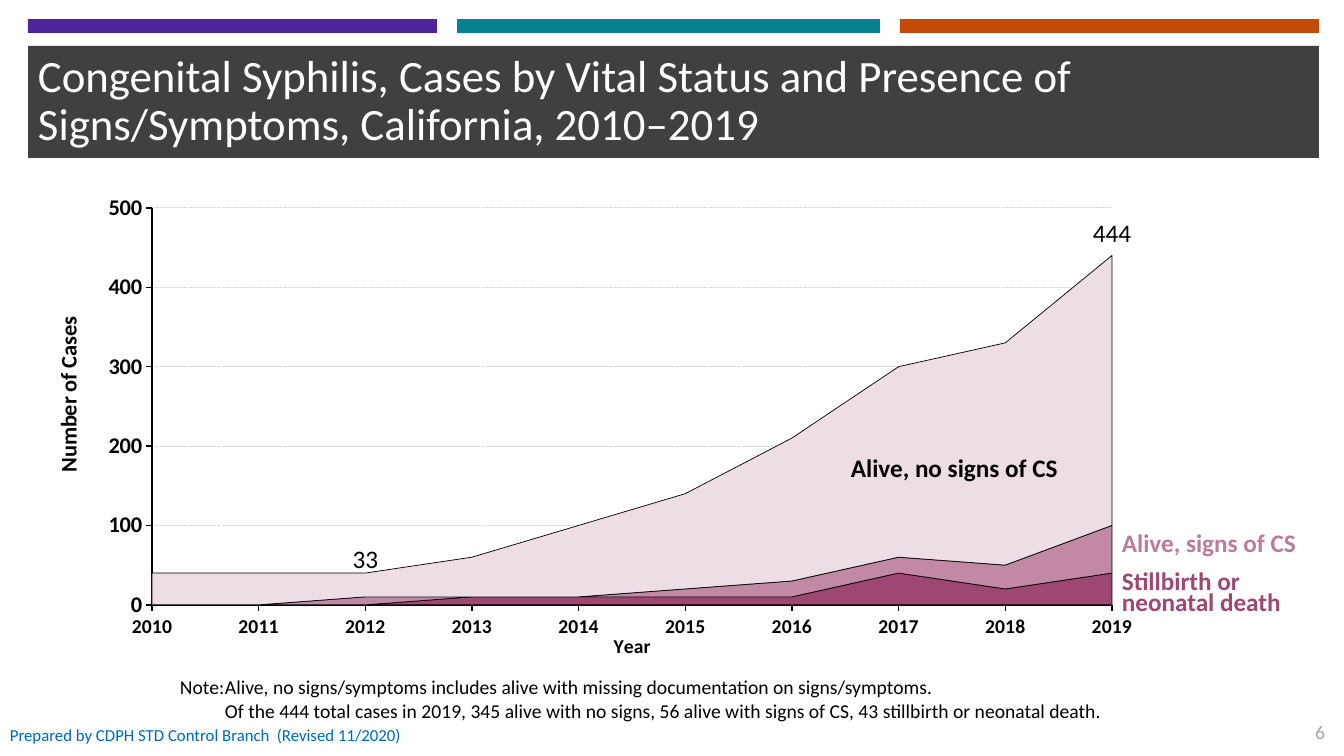
import pptx
import pptx.chart.data
import pptx.dml.color
import pptx.enum.chart
import pptx.enum.dml
import pptx.enum.shapes
import pptx.enum.text
import pptx.oxml
import pptx.oxml.ns
import pptx.util

Pt = pptx.util.Pt
qn = pptx.oxml.ns.qn
Align = pptx.enum.text.PP_ALIGN
Anchor = pptx.enum.text.MSO_ANCHOR
Kind = pptx.enum.chart.XL_CHART_TYPE
Mark = pptx.enum.chart.XL_TICK_MARK
SCALE = 914400 / 100.8
FONT = "Calibri"
HUES = {
    "dark": "404040", "violet": "4F259C", "teal": "068190", "orange": "C44A07",
    "white": "FFFFFF", "black": "000000", "gray": "A6A6A6", "grid": "D9D9D9",
    "blue": "0167BB", "plum": "9E4770", "mauve": "C189A4", "rose": "BA7C9A",
    "pale": "EDDDE5",
}
YEARS = [str(year) for year in range(2010, 2020)]
DEATHS = [0, 0, 0, 10, 10, 10, 10, 40, 20, 40]
SIGNS = [0, 0, 10, 0, 0, 10, 20, 20, 30, 60]
CLEAR = [40, 40, 30, 50, 90, 120, 180, 240, 280, 340]
TOTALS = [47, 46, 33, 58, 104, 148, 214, 288, 328, 444]
WIDE, HIGH = 1273, 510  # chart size


def px(n):
    return pptx.util.Emu(round(n * SCALE))


def rgb(hue):
    return pptx.dml.color.RGBColor.from_string(HUES[hue])


def style(font, size, hue="black", bold=False):
    font.name, font.size, font.bold = FONT, Pt(size), bold
    font.color.rgb = rgb(hue)


def stroke(line, hue, width):
    line.color.rgb = rgb(hue)
    line.width = Pt(width)


def layout(x, y, w=None, h=None):
    """Manual chart layout from px within the chart."""
    parts = ['<c:layoutTarget val="inner"/>'] if w else []
    parts += [f'<c:{side}Mode val="edge"/>' for side in "xy"]
    sizes = zip("xywh", (x, y, w, h), (WIDE, HIGH, WIDE, HIGH))
    parts += [f'<c:{side} val="{n / full}"/>'
              for side, n, full in sizes if n is not None]
    return pptx.oxml.parse_xml(
        f'<c:layout {pptx.oxml.ns.nsdecls("c")}><c:manualLayout>'
        f'{"".join(parts)}</c:manualLayout></c:layout>')


class Page:
    def __init__(self, deck):
        self.slide = deck.slides.add_slide(deck.slide_layouts[6])
        self.shapes = self.slide.shapes

    def bar(self, x, y, w, h, hue):
        box = self.shapes.add_shape(
            pptx.enum.shapes.MSO_SHAPE.RECTANGLE, px(x), px(y), px(w), px(h))
        box.shadow.inherit = False
        box.fill.solid()
        box.fill.fore_color.rgb = rgb(hue)
        box.line.fill.background()

    def text(self, words, x, y, w, h, size=18, hue="black", bold=False,
             align=Align.LEFT, anchor=Anchor.TOP, lead=None, wrap=True, hang=0):
        frame = self.shapes.add_textbox(px(x), px(y), px(w), px(h)).text_frame
        frame.word_wrap = wrap
        frame.vertical_anchor = anchor
        for i, line in enumerate(words.split("\n")):
            para = frame.add_paragraph() if i else frame.paragraphs[0]
            para.alignment = align
            if lead:
                para.line_spacing = lead
            run = para.add_run()
            run.text = line
            style(run.font, size, hue, bold)
            if hang:
                props = para._p.get_or_add_pPr()
                props.set("marL", str(px(hang)))
                props.set("indent", str(-px(hang)))
                props.append(pptx.oxml.parse_xml(
                    f'<a:tabLst {pptx.oxml.ns.nsdecls("a")}>'
                    f'<a:tab pos="{px(hang)}" algn="l"/></a:tabLst>'))

    def axis(self, axis, title, size, x, y, turn):
        axis.major_tick_mark = Mark.OUTSIDE
        axis.minor_tick_mark = Mark.NONE
        style(axis.tick_labels.font, size, bold=True)
        stroke(axis.format.line, "black", 1)
        frame = axis.axis_title.text_frame
        frame.text = title
        style(frame.paragraphs[0].runs[0].font, size, bold=True)
        node = axis.axis_title._element
        node.find(".//" + qn("a:bodyPr")).set("rot", str(turn * 60000))
        for old in node.findall(qn("c:layout")):
            node.remove(old)
        node.find(qn("c:tx")).addnext(layout(x, y))

    def chart(self, x, y):
        data = pptx.chart.data.CategoryChartData(number_format="0")
        data.categories = YEARS
        for name, vals in (("Stillbirth or neonatal death", DEATHS),
                           ("Alive, signs of CS", SIGNS),
                           ("Alive, no signs of CS", CLEAR), ("Total", TOTALS)):
            data.add_series(name, vals)
        chart = self.shapes.add_chart(
            Kind.AREA_STACKED, px(x), px(y), px(WIDE), px(HIGH), data).chart
        chart.has_legend = chart.has_title = False
        style(chart.font, 18)

        cats, vals = chart.category_axis, chart.value_axis
        self.axis(cats, "Year", 14, 564, 458, 0)
        self.axis(vals, "Number of Cases", 16, 3, 142, -90)
        cats.has_major_gridlines = False
        vals.minimum_scale, vals.maximum_scale, vals.major_unit = 0, 500, 100
        vals.tick_labels.number_format = "#,##0"
        vals.tick_labels.number_format_is_linked = False
        vals.has_major_gridlines = True
        grid = vals.major_gridlines.format.line
        stroke(grid, "grid", 0.75)
        grid.dash_style = pptx.enum.dml.MSO_LINE.SQUARE_DOT
        vals._element.find(qn("c:crossBetween")).set("val", "midCat")

        plot = chart._chartSpace.find(".//" + qn("c:plotArea"))
        for old in plot.findall(qn("c:layout")):
            plot.remove(old)
        plot.insert(0, layout(106, 37, 960, 397))
        self.totals(chart, plot.find(qn("c:areaChart")))
        for part, hue in zip(chart.plots[0].series, ("plum", "mauve", "pale")):
            part.format.fill.solid()
            part.format.fill.fore_color.rgb = rgb(hue)
            stroke(part.format.line, "black", 0.5)

    def totals(self, chart, area):
        """Turn the last area into an unseen line that bears the total labels."""
        line = pptx.oxml.parse_xml(
            f'<c:lineChart {pptx.oxml.ns.nsdecls("c")}>'
            '<c:grouping val="standard"/><c:varyColors val="0"/>'
            '<c:marker val="1"/></c:lineChart>')
        line.insert(2, area.findall(qn("c:ser"))[-1])
        for ref in area.findall(qn("c:axId")):
            line.append(pptx.oxml.parse_xml(
                f'<c:axId {pptx.oxml.ns.nsdecls("c")} val="{ref.get("val")}"/>'))
        area.addnext(line)
        for plot in chart.plots:
            plot.vary_by_categories = False
        total = chart.plots[1].series[0]
        total.smooth = False
        total.marker.style = pptx.enum.chart.XL_MARKER_STYLE.NONE
        total.format.line.fill.background()
        for year in ("2012", "2019"):
            label = total.points[YEARS.index(year)].data_label
            style(label.font, 18)
            label.position = pptx.enum.chart.XL_LABEL_POSITION.ABOVE


def main():
    deck = pptx.Presentation()
    deck.slide_width, deck.slide_height = px(1344), px(756)
    page = Page(deck)
    page.bar(28, 46, 1291, 112, "dark")
    for x, w, hue in ((28, 409, "violet"), (457, 423, "teal"), (900, 419, "orange")):
        page.bar(x, 19, w, 14, hue)
    page.text("Congenital Syphilis, Cases by Vital Status and Presence of "
              "Signs/Symptoms, California, 2010–2019", 28, 46, 1291, 112,
              size=32, hue="white", anchor=Anchor.MIDDLE, lead=0.9)
    page.chart(46, 171)
    page.text("Alive, no signs of CS", 841, 447, 229, 40, bold=True, wrap=False)
    page.text("Alive, signs of CS", 1112, 532, 209, 33,
              hue="rose", bold=True, lead=Pt(15))
    page.text("Stillbirth or neonatal death", 1112, 570, 209, 54,
              hue="plum", bold=True, lead=Pt(15))
    page.text("Note:\tAlive, no signs/symptoms includes alive with missing "
              "documentation on signs/symptoms.\n\tOf the 444 total cases in 2019, "
              "345 alive with no signs, 56 alive with signs of CS, "
              "43 stillbirth or neonatal death.", 170, 670, 952, 57, size=14, hang=45)
    for words, x, w in (("Prepared by CDPH STD Control Branch", 0, 282),
                        ("(Revised 11/2020)", 267, 151)):
        page.text(words, x, 715, w, 40, size=12, hue="blue", anchor=Anchor.MIDDLE)
    page.text("6", 1292, 715, 43, 34, size=14, hue="gray", align=Align.RIGHT)
    deck.save("out.pptx")


if __name__ == "__main__":
    main()
